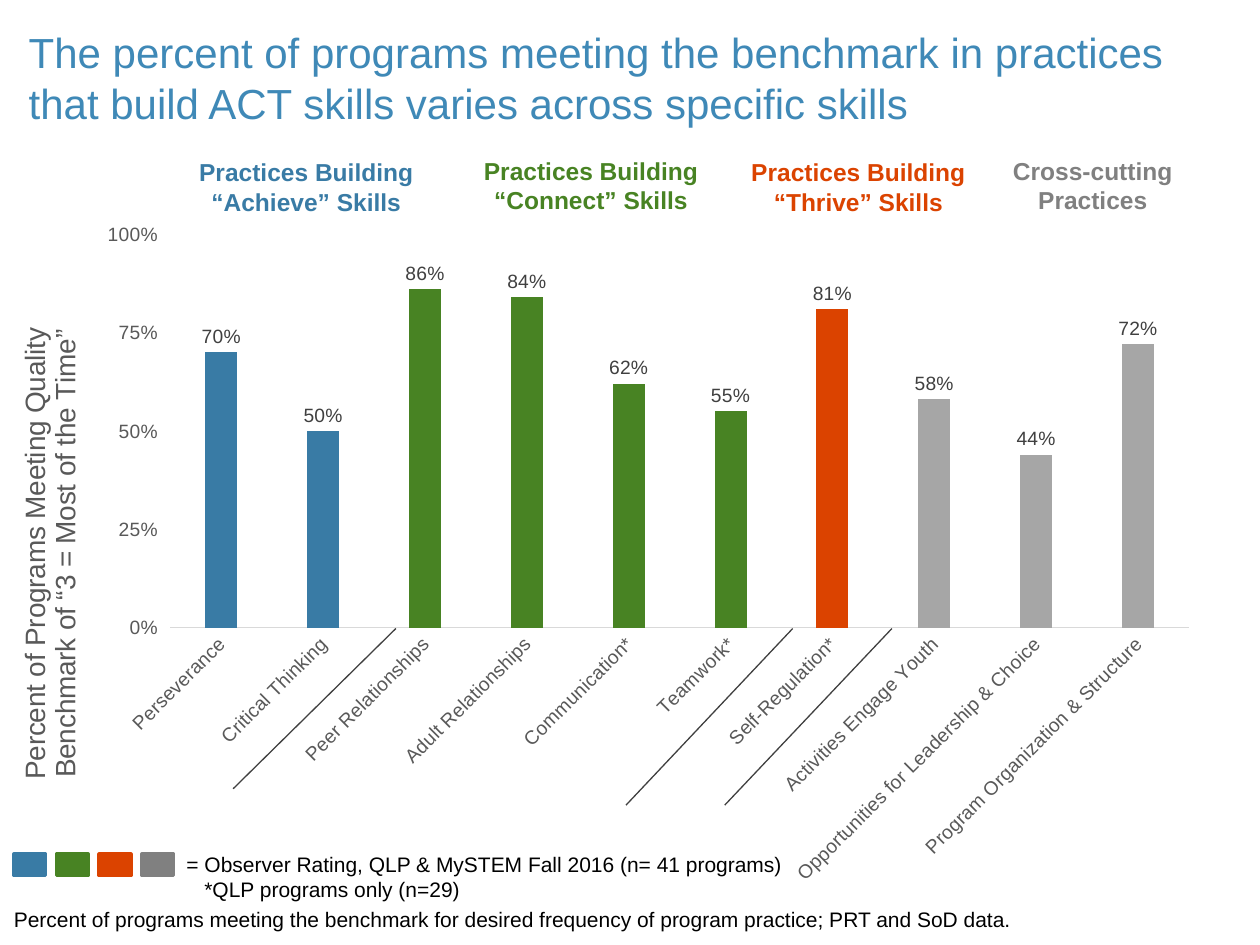
from dataclasses import dataclass

from lxml import etree
from pptx import Presentation
from pptx.chart.data import CategoryChartData
from pptx.dml.color import RGBColor
from pptx.enum.chart import XL_CHART_TYPE, XL_LABEL_POSITION, XL_TICK_MARK
from pptx.enum.shapes import MSO_CONNECTOR, MSO_SHAPE
from pptx.enum.text import MSO_ANCHOR, MSO_AUTO_SIZE, PP_ALIGN
from pptx.oxml.ns import qn
from pptx.slide import Slide
from pptx.util import Cm, Pt

COLUMN = XL_CHART_TYPE.COLUMN_CLUSTERED
OUTSIDE_END = XL_LABEL_POSITION.OUTSIDE_END
TICK_NONE, TICK_OUT = XL_TICK_MARK.NONE, XL_TICK_MARK.OUTSIDE
STRAIGHT = MSO_CONNECTOR.STRAIGHT
RECTANGLE = MSO_SHAPE.RECTANGLE
LEFT, CENTER = PP_ALIGN.LEFT, PP_ALIGN.CENTER
TOP, MIDDLE = MSO_ANCHOR.TOP, MSO_ANCHOR.MIDDLE
FIT_SHAPE, FIT_NONE = MSO_AUTO_SIZE.SHAPE_TO_FIT_TEXT, MSO_AUTO_SIZE.NONE

BLACK = RGBColor(0x00, 0x00, 0x00)
TITLE_BLUE = RGBColor(0x3F, 0x89, 0xB7)
BLUE = RGBColor(0x39, 0x7B, 0xA5)
GREEN = RGBColor(0x48, 0x83, 0x23)
ORANGE = RGBColor(0xDB, 0x43, 0x00)
GRAY = RGBColor(0x80, 0x80, 0x80)
BAR_GRAY = RGBColor(0xA6, 0xA6, 0xA6)
DARK_GRAY = RGBColor(0x40, 0x40, 0x40)
AXIS_GRAY = RGBColor(0x59, 0x59, 0x59)
LINE_GRAY = RGBColor(0xD9, 0xD9, 0xD9)

PRACTICES = [
    ("Perseverance", 0.70, BLUE),
    ("Critical Thinking", 0.50, BLUE),
    ("Peer Relationships", 0.86, GREEN),
    ("Adult Relationships", 0.84, GREEN),
    ("Communication*", 0.62, GREEN),
    ("Teamwork*", 0.55, GREEN),
    ("Self-Regulation*", 0.81, ORANGE),
    ("Activities Engage Youth", 0.58, BAR_GRAY),
    ("Opportunities for Leadership & Choice", 0.44, BAR_GRAY),
    ("Program Organization & Structure", 0.72, BAR_GRAY),
]
AXIS_TITLE = ["Percent of Programs Meeting Quality", "Benchmark of “3 = Most of the Time”"]
PLOT_LAYOUT = {"layoutTarget": "inner", "xMode": "edge", "yMode": "edge",
               "x": 0.131, "y": 0.103, "w": 0.852, "h": 0.529}
HEADINGS = [
    (["Practices Building “Achieve” Skills"], 3.43, 3.05, 5.49, BLUE),
    (["Practices Building “Connect” Skills"], 9.35, 3.02, 5.13, GREEN),
    (["Practices Building “Thrive” Skills"], 14.88, 3.05, 4.85, ORANGE),
    (["Cross-cutting", "Practices"], 20.14, 3.02, 3.78, GRAY),
]
DIVIDERS = [(7.98, 4.7, 15.9), (15.98, 12.62, 16.23), (17.98, 14.61, 16.23)]


@dataclass
class SlideBuilder:
    """Draws styled elements on one slide, with lengths in centimetres."""

    slide: Slide
    font_name: str = "Arial"

    def style(self, font, size, color, bold=False):
        font.name, font.size, font.bold = self.font_name, Pt(size), bold
        font.color.rgb = color

    def text(self, lines, box, size, color, bold=False, align=LEFT, anchor=TOP, fit=FIT_SHAPE):
        shape = self.slide.shapes.add_textbox(*map(Cm, box))
        frame = shape.text_frame
        frame.word_wrap, frame.auto_size, frame.vertical_anchor = True, fit, anchor
        frame.text = "\n".join(lines)
        for paragraph in frame.paragraphs:
            paragraph.alignment = align
            self.style(paragraph.font, size, color, bold)
        return frame

    def swatch(self, box, color):
        shape = self.slide.shapes.add_shape(RECTANGLE, *map(Cm, box))
        shape.shadow.inherit = False
        shape.fill.solid()
        shape.fill.fore_color.rgb = color
        shape.line.color.rgb = color
        shape.line.width = Pt(2)

    def line(self, *ends):
        connector = self.slide.shapes.add_connector(STRAIGHT, *map(Cm, ends))
        connector.line.color.rgb = DARK_GRAY
        connector.line.width = Pt(0.75)
        properties = connector.element.find(qn("p:spPr"))
        etree.SubElement(properties, qn("a:effectLst"))

    def column_chart(self, box):
        data = CategoryChartData(number_format="0%")
        names, values, colors = zip(*PRACTICES)
        data.categories = names
        data.add_series("Series 1", values)
        chart = self.slide.shapes.add_chart(COLUMN, *map(Cm, box), data).chart
        chart.has_legend = chart.has_title = False
        self.style(chart.font, 10, BLACK)
        self.columns(chart.plots[0], colors)
        self.axes(chart)
        self.plot_layout(chart)

    def columns(self, plot, colors):
        plot.gap_width, plot.overlap, plot.vary_by_categories = 219, -27, False
        series = plot.series[0]
        series.format.fill.solid()
        series.format.fill.fore_color.rgb = GREEN
        for index, color in enumerate(colors):
            if color != GREEN:
                fill = series.points[index].format.fill
                fill.solid()
                fill.fore_color.rgb = color
        labels = series.data_labels
        labels.show_value, labels.position = True, OUTSIDE_END
        labels.number_format, labels.number_format_is_linked = "0%", False
        self.style(labels.font, 11, DARK_GRAY)

    def axes(self, chart):
        category_axis, value_axis = chart.category_axis, chart.value_axis
        for axis, tick in ((category_axis, TICK_NONE), (value_axis, TICK_OUT)):
            axis.major_tick_mark, axis.minor_tick_mark = tick, TICK_NONE
            axis.has_major_gridlines = False
            self.style(axis.tick_labels.font, 11, AXIS_GRAY)
        category_axis.format.line.color.rgb = LINE_GRAY
        category_axis.format.line.width = Pt(0.75)
        chart.element.xpath(".//c:catAx/c:txPr/a:bodyPr")[0].set("rot", "-2700000")
        value_axis.format.line.fill.background()
        value_axis.minimum_scale, value_axis.maximum_scale = 0, 1
        value_axis.major_unit = 0.25
        value_axis.tick_labels.number_format = "0%"
        value_axis.tick_labels.number_format_is_linked = False
        frame = value_axis.axis_title.text_frame
        frame.text = "\n".join(AXIS_TITLE)
        for paragraph in frame.paragraphs:
            self.style(paragraph.font, 16, AXIS_GRAY)
        body = chart.element.xpath(".//c:valAx/c:title//a:bodyPr")[0]
        body.set("rot", "-5400000")
        body.set("vert", "horz")

    def plot_layout(self, chart):
        plot_area = chart.element.xpath(".//c:plotArea")[0]
        for layout in plot_area.findall(qn("c:layout")):
            plot_area.remove(layout)
        layout = etree.Element(qn("c:layout"))
        manual = etree.SubElement(layout, qn("c:manualLayout"))
        for name, value in PLOT_LAYOUT.items():
            etree.SubElement(manual, qn(f"c:{name}")).set("val", str(value))
        plot_area.insert(0, layout)


def main():
    presentation = Presentation()
    presentation.slide_width, presentation.slide_height = Cm(25.4), Cm(19.05)
    builder = SlideBuilder(presentation.slides.add_slide(presentation.slide_layouts[6]))

    builder.column_chart((0.28, 3.18, 24.1, 14.99))
    for start_x, end_x, end_y in DIVIDERS:
        builder.line(start_x, 12.67, end_x, end_y)
    for lines, left, top, width, color in HEADINGS:
        builder.text(lines, (left, top, width, 1.45), 14, color, bold=True, align=CENTER)

    builder.text(
        ["The percent of programs meeting the benchmark in practices "
         "that build ACT skills varies across specific skills"],
        (0.33, 0.3, 24.66, 2.51), 24, TITLE_BLUE, anchor=MIDDLE, fit=FIT_NONE)
    builder.text(
        ["Percent of programs meeting the benchmark for desired frequency "
         "of program practice; PRT and SoD data."],
        (0.03, 18.16, 22.02, 0.76), 12, BLACK)
    legend = builder.text(
        ["= Observer Rating, QLP & MySTEM Fall 2016 (n= 41 programs)",
         "*QLP programs only (n=29)"],
        (3.51, 17.04, 12.83, 1.27), 12, BLACK)
    legend.paragraphs[1]._p.get_or_add_pPr().set("marL", str(Cm(0.36)))
    for index, color in enumerate((BLUE, GREEN, ORANGE, GRAY)):
        builder.swatch((0.28 + 0.86 * index, 17.22, 0.64, 0.43), color)

    presentation.save("out.pptx")


if __name__ == "__main__":
    main()
